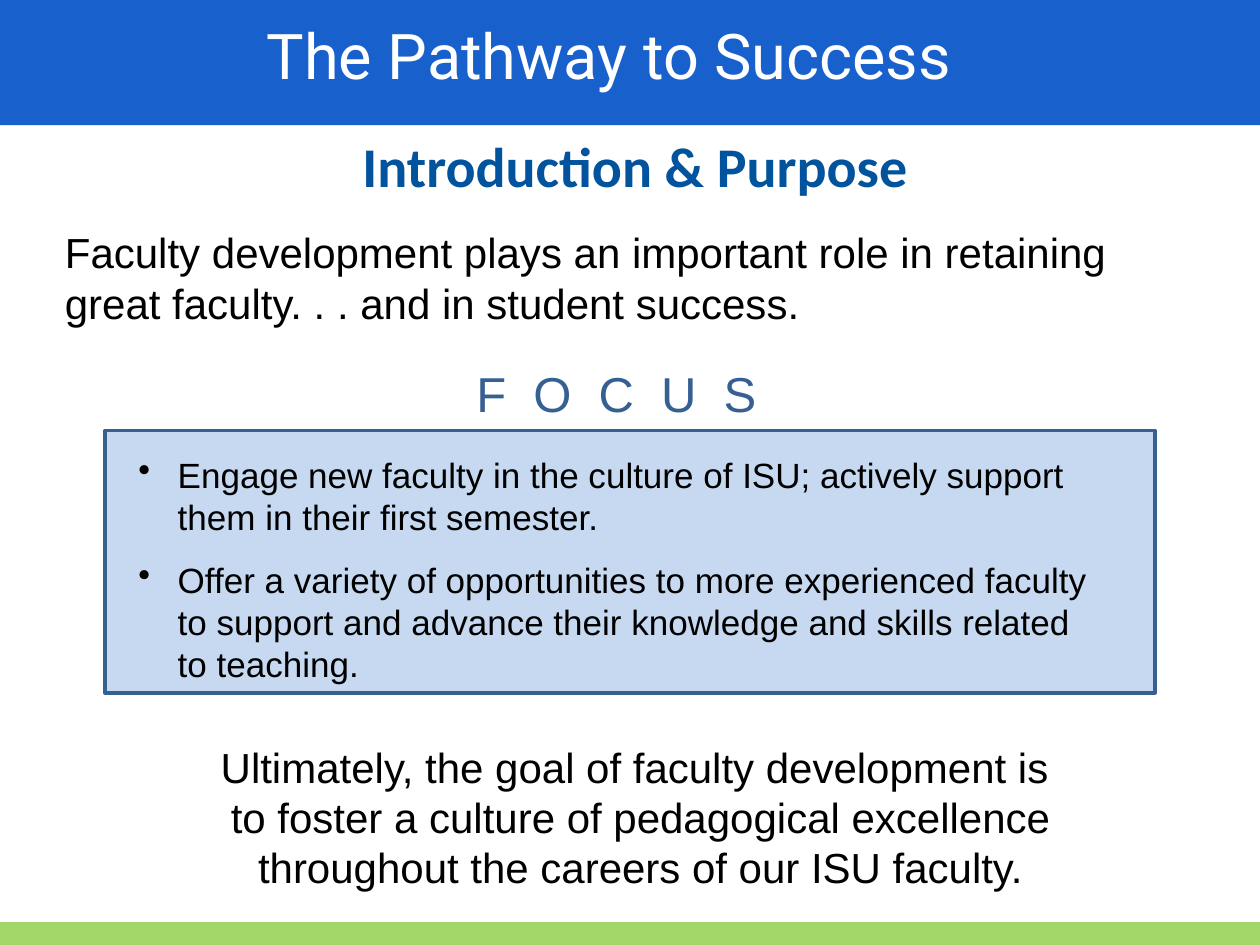
from pptx import Presentation
from pptx.dml.color import RGBColor
from pptx.enum.shapes import MSO_CONNECTOR, MSO_SHAPE
from pptx.enum.text import MSO_AUTO_SIZE, PP_ALIGN
from pptx.oxml.ns import qn
from pptx.util import Pt
from lxml.etree import SubElement

HUES = {
    "white": "FFFFFF", "black": "000000", "bar": "0F5BCB", "head": "00539C",
    "panel": "C6D9F1", "edge": "376092", "foot": "A2D668",
}


class Page:
    def __init__(self, slide, face="Arial"):
        self.slide = slide
        self.face = face

    def hue(self, name):
        return RGBColor.from_string(HUES[name])

    def box(self, left, top, width, height, fill, edge=None, alpha=None):
        shape = self.slide.shapes.add_shape(
            MSO_SHAPE.RECTANGLE, Pt(left), Pt(top), Pt(width), Pt(height))
        shape.shadow.inherit = False
        shape.fill.solid()
        shape.fill.fore_color.rgb = self.hue(fill)
        if edge:
            shape.line.color.rgb = self.hue(edge)
            shape.line.width = Pt(2)
        else:
            shape.line.fill.background()
        if alpha:
            tint = shape.fill._xPr.find(".//" + qn("a:srgbClr"))
            SubElement(tint, qn("a:alpha")).set("val", str(alpha * 1000))

    def rule(self, x1, y1, x2, y2, hue, width):
        line = self.slide.shapes.add_connector(
            MSO_CONNECTOR.STRAIGHT, Pt(x1), Pt(y1), Pt(x2), Pt(y2))
        line.line.color.rgb = self.hue(hue)
        line.line.width = Pt(width)
        SubElement(line._element.spPr, qn("a:effectLst"))

    def text(self, left, top, width, height, lines, size, hue="black",
             face=None, bold=False, center=True, wrap=True, gap=0,
             pitch=None, indent=0, track=0):
        area = self.slide.shapes.add_textbox(
            Pt(left), Pt(top), Pt(width), Pt(height))
        frame = area.text_frame
        frame.word_wrap = wrap
        frame.auto_size = MSO_AUTO_SIZE.SHAPE_TO_FIT_TEXT
        for i, line in enumerate(lines):
            para = frame.add_paragraph() if i else frame.paragraphs[0]
            para.text = line
            para.alignment = PP_ALIGN.CENTER if center else PP_ALIGN.LEFT
            font = para.font
            font.name, font.size, font.bold = face or self.face, Pt(size), bold
            font.color.rgb = self.hue(hue)
            if i:
                para.space_before = Pt(gap)
            if pitch:
                para.line_spacing = Pt(pitch)
            if indent:
                self.bullet(para, indent)
            if track:
                for run in para.runs:
                    run._r.get_or_add_rPr().set("spc", str(int(track * 100)))

    def bullet(self, para, indent):
        props = para._p.get_or_add_pPr()
        props.set("marL", str(Pt(indent)))
        props.set("indent", str(-Pt(indent)))
        mark = props.makeelement(qn("a:buChar"), {"char": "•"})
        props.find(qn("a:defRPr")).addprevious(mark)


def main():
    deck = Presentation()
    deck.slide_width, deck.slide_height = Pt(720), Pt(540)
    page = Page(deck.slides.add_slide(deck.slide_layouts[6]))

    # Panel, footer line and title bar
    page.box(60, 246, 600, 150, "panel", edge="edge")
    page.rule(720, 534, 0, 534, "foot", 14)
    page.box(0, 0, 720, 71.5, "bar", alpha=96)

    # Title and heading
    page.text(6, 6, 684, 51, ["The Pathway to Success"], 36, "white", "Roboto")
    page.text(18, 78, 690, 40, ["Introduction & Purpose"], 32, "head",
              "Calibri", bold=True, pitch=32)

    # Opening statement
    page.text(30, 126, 660, 65.5, [
        "Faculty development plays an important role in retaining "
        "great faculty. . . and in student success."], 24, center=False)

    # Focus points
    page.text(72, 255.6, 582, 140, [
        "Engage new faculty in the culture of ISU; actively support \v"
        "them in their first semester.",
        "Offer a variety of opportunities to more experienced faculty\v"
        "to support and advance their knowledge and skills related\v"
        "to teaching."], 20, center=False, gap=12, indent=22.5)

    # Closing goal
    page.text(90, 420, 552, 94.5, [
        "Ultimately, the goal of faculty development is \v"
        "to foster a culture of pedagogical excellence "
        "throughout the careers of our ISU faculty."], 24)

    # Panel label
    page.text(264, 204, 176.5, 41, ["F O C U S"], 28, "edge",
              wrap=False, track=3.9)

    deck.save("out.pptx")


if __name__ == "__main__":
    main()
